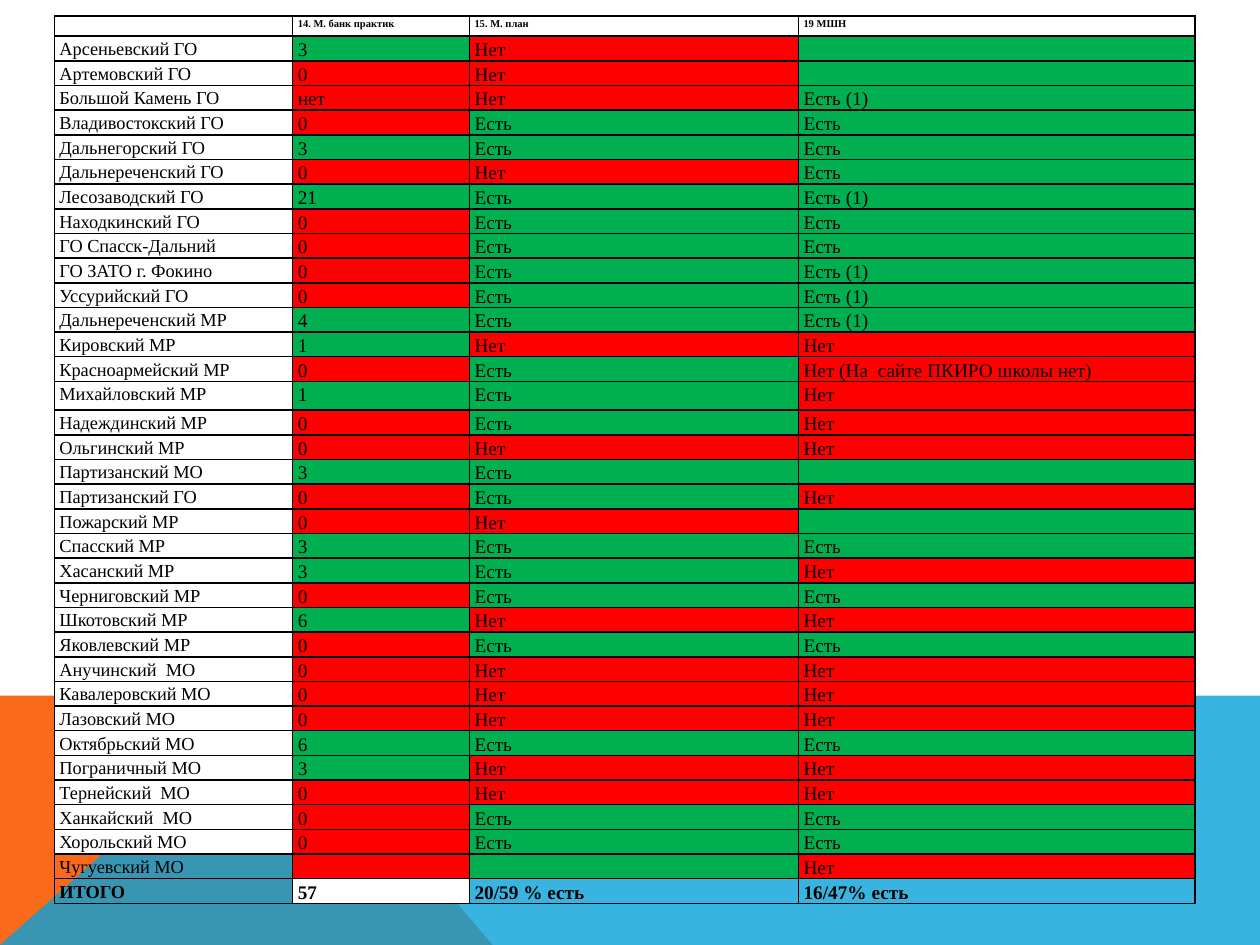
from pptx import Presentation
from pptx.dml.color import RGBColor
from pptx.oxml.ns import qn
from pptx.util import Pt
from lxml import etree

BLACK = RGBColor(0x00, 0x00, 0x00)
WHITE = RGBColor(0xFF, 0xFF, 0xFF)
GREEN = RGBColor(0x00, 0xB0, 0x50)
RED = RGBColor(0xFF, 0x00, 0x00)
ORANGE = RGBColor(0xF9, 0x6A, 0x1B)
BLUE = RGBColor(0x08, 0xA1, 0xD9)

FONT = "Times New Roman"
COL_WIDTHS = (136.2, 101, 188, 226.8)
HEADER_HEIGHT, ROW_HEIGHT, TALL_HEIGHT = 11.5, 14, 16.5
TALL_ROW = "Михайловский МР"
LAST_ROW = "Чугуевский МО"

HEADER = ("", "14. М. банк практик", "15. М. план", "19 МШН")
TOTAL = ("ИТОГО", "57", "20/59 % есть", "16/47% есть")
# "+" and "-" stand for an empty green or red cell
ROWS = (
    ("Арсеньевский ГО", "3", "Нет", "+"),
    ("Артемовский ГО", "0", "Нет", "+"),
    ("Большой Камень ГО", "нет", "Нет", "Есть (1)"),
    ("Владивостокский ГО", "0", "Есть", "Есть"),
    ("Дальнегорский ГО", "3", "Есть", "Есть"),
    ("Дальнереченский ГО", "0", "Нет", "Есть"),
    ("Лесозаводский ГО", "21", "Есть", "Есть (1)"),
    ("Находкинский ГО", "0", "Есть", "Есть"),
    ("ГО Спасск-Дальний", "0", "Есть", "Есть"),
    ("ГО ЗАТО г. Фокино", "0", "Есть", "Есть (1)"),
    ("Уссурийский ГО", "0", "Есть", "Есть (1)"),
    ("Дальнереченский МР", "4", "Есть", "Есть (1)"),
    ("Кировский МР", "1", "Нет", "Нет"),
    ("Красноармейский МР", "0", "Есть", "Нет (На  сайте ПКИРО школы нет)"),
    ("Михайловский МР", "1", "Есть", "Нет"),
    ("Надеждинский МР", "0", "Есть", "Нет"),
    ("Ольгинский МР", "0", "Нет", "Нет"),
    ("Партизанский МО", "3", "Есть", "+"),
    ("Партизанский ГО", "0", "Есть", "Нет"),
    ("Пожарский МР", "0", "Нет", "+"),
    ("Спасский МР", "3", "Есть", "Есть"),
    ("Хасанский МР", "3", "Есть", "Нет"),
    ("Черниговский МР", "0", "Есть", "Есть"),
    ("Шкотовский МР", "6", "Нет", "Нет"),
    ("Яковлевский МР", "0", "Есть", "Есть"),
    ("Анучинский  МО", "0", "Нет", "Нет"),
    ("Кавалеровский МО", "0", "Нет", "Нет"),
    ("Лазовский МО", "0", "Нет", "Нет"),
    ("Октябрьский МО", "6", "Есть", "Есть"),
    ("Пограничный МО", "3", "Нет", "Нет"),
    ("Тернейский  МО", "0", "Нет", "Нет"),
    ("Ханкайский  МО", "0", "Есть", "Есть"),
    ("Хорольский МО", "0", "Есть", "Есть"),
    ("Чугуевский МО", "-", "+", "Нет"),
)


def status_color(text):
    """Green for a positive count, a "yes" or "+", red for the rest."""
    good = text == "+" or text.startswith("Есть") or (text.isdigit() and text != "0")
    return GREEN if good else RED


def add_polygon(slide, points, color, alpha=None):
    points = [(Pt(x), Pt(y)) for x, y in points]
    builder = slide.shapes.build_freeform(*points[0], scale=1.0)
    builder.add_line_segments(points[1:], close=True)
    s = builder.convert_to_shape()
    s.shadow.inherit = False
    s.fill.solid()
    s.fill.fore_color.rgb = color
    s.line.fill.background()
    if alpha is not None:
        clr = s.fill._xPr.find(".//" + qn("a:srgbClr"))
        etree.SubElement(clr, qn("a:alpha"), val=str(alpha * 1000))


def add_bottom_band(slide, x, y, w, h):
    """Orange wedge on the left under a translucent blue band."""
    peak = (x + 160.6, y)
    bottom_left = (x, y + h)
    add_polygon(slide, [bottom_left, (x, y), peak, (x + 281.5, y + h)], ORANGE)
    add_polygon(slide, [bottom_left, peak, (x + w, y), (x + w, y + h)], BLUE, 80)


def set_borders(cell):
    tc_pr = cell._tc.get_or_add_tcPr()
    for i, side in enumerate(("lnL", "lnR", "lnT", "lnB")):
        ln = etree.Element(qn("a:" + side), w=str(Pt(1)))
        fill = etree.SubElement(ln, qn("a:solidFill"))
        etree.SubElement(fill, qn("a:srgbClr"), val=str(BLACK))
        tc_pr.insert(i, ln)


def fill_cell(cell, text, size, bold=False, color=None):
    cell.margin_left = cell.margin_right = Pt(3)
    cell.margin_top = cell.margin_bottom = 0
    if color is None:
        cell.fill.background()
    else:
        cell.fill.solid()
        cell.fill.fore_color.rgb = color
    set_borders(cell)
    p = cell.text_frame.paragraphs[0]
    p.line_spacing = 1.15
    if not text:
        p._p.get_or_add_endParaRPr().set("sz", str(int(size * 100)))
        return
    r = p.add_run()
    r.text = text
    r.font.name = FONT
    r.font.size = Pt(size)
    r.font.bold = bold
    r.font.color.rgb = BLACK


def add_status_table(slide, x, y):
    heights = [HEADER_HEIGHT]
    heights += [TALL_HEIGHT if row[0] == TALL_ROW else ROW_HEIGHT for row in ROWS]
    heights.append(ROW_HEIGHT)
    table = slide.shapes.add_table(
        len(heights), len(COL_WIDTHS), Pt(x), Pt(y),
        Pt(sum(COL_WIDTHS)), Pt(sum(heights))).table
    table.first_row = table.horz_banding = False
    for column, width in zip(table.columns, COL_WIDTHS):
        column.width = Pt(width)
    for row, height in zip(table.rows, heights):
        row.height = Pt(height)

    for c, text in enumerate(HEADER):
        fill_cell(table.cell(0, c), text, 6, bold=True)
    for i, (name, *statuses) in enumerate(ROWS, start=1):
        fill_cell(table.cell(i, 0), name, 10.5,
                  color=None if name == LAST_ROW else WHITE)
        for c, status in enumerate(statuses, start=1):
            fill_cell(table.cell(i, c), status.strip("+-"), 11,
                      color=status_color(status))
    for c, text in enumerate(TOTAL):
        fill_cell(table.cell(len(heights) - 1, c), text, 11 if c else 10.5,
                  bold=True, color=WHITE if c == 1 else None)


def main():
    prs = Presentation()
    prs.slide_width, prs.slide_height = Pt(720), Pt(540)
    slide = prs.slides.add_slide(prs.slide_layouts[6])
    add_bottom_band(slide, 0, 397.6, 720, 142.4)
    add_status_table(slide, 31, 9.2)
    prs.save("out.pptx")


if __name__ == "__main__":
    main()
